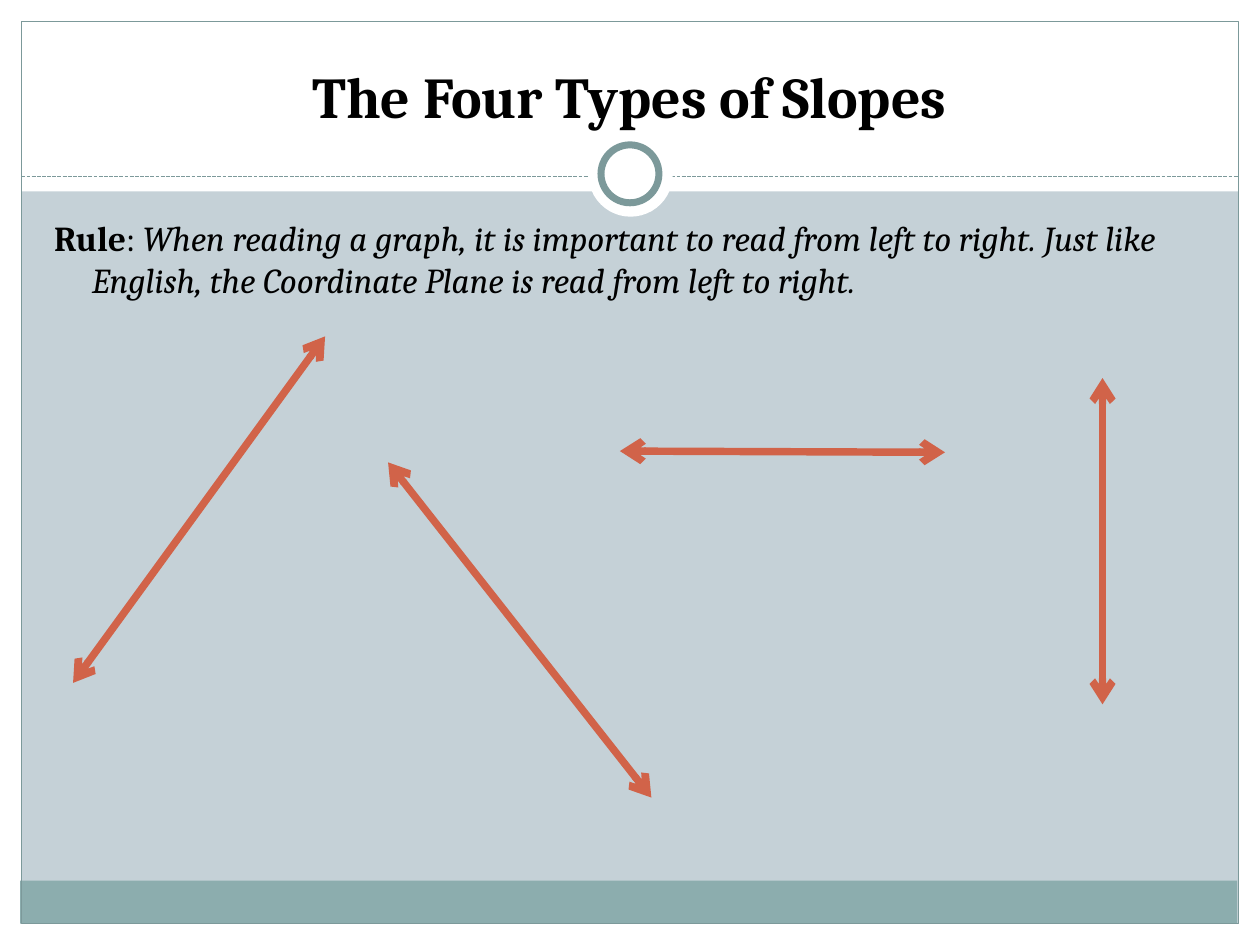
from lxml.etree import SubElement
from pptx import Presentation
from pptx.dml.color import RGBColor
from pptx.enum.dml import MSO_LINE
from pptx.enum.shapes import MSO_CONNECTOR, MSO_SHAPE
from pptx.enum.text import MSO_ANCHOR, MSO_AUTO_SIZE, PP_ALIGN
from pptx.oxml.ns import qn
from pptx.util import Inches, Pt

WHITE, MIST, TEAL, BORDER, ORANGE, BLACK = (
    "FFFFFF", "C5D1D7", "8CADAE", "7C999A", "D16349", "000000")


def paint(color_format, hex_color):
    """Colour a fill, or the fill of a line."""
    color_format.solid()
    color_format.fore_color.rgb = RGBColor.from_string(hex_color)


def add_line(start, end, color, width):
    line = slide.shapes.add_connector(
        MSO_CONNECTOR.STRAIGHT, *[Inches(v) for v in (*start, *end)])
    paint(line.line.fill, color)
    line.line.width = Pt(width)
    SubElement(line.element.spPr, qn("a:effectLst"))
    return line.line


prs = Presentation()
prs.slide_width, prs.slide_height = Inches(10), Inches(7.5)
slide = prs.slides.add_slide(prs.slide_layouts[1])
paint(slide.background.fill, MIST)

# Frame: white margins, header, footer band, border
panels = [
    ((0, 7.33, 10, 0.17), WHITE, None),
    ((0, 0, 10, 1.52), WHITE, None),
    ((0, 0, 0.17, 7.5), WHITE, None),
    ((9.83, 0, 0.17, 7.5), WHITE, None),
    ((0.16, 6.99, 9.66, 0.34), TEAL, None),
    ((0.17, 0.17, 9.66, 7.16), None, 0.75),
]
# Ring on the dashed divider
ring = [
    ((4.67, 1.05, 0.67, 0.67), WHITE, None),
    ((4.77, 1.15, 0.46, 0.46), WHITE, 4),
]
for preset, parts in ((MSO_SHAPE.RECTANGLE, panels), (MSO_SHAPE.OVAL, ring)):
    if parts is ring:
        divider = add_line((0.17, 1.4), (9.83, 1.4), BORDER, 0.75)
        divider.dash_style = MSO_LINE.SQUARE_DOT
    for box, fill, border_width in parts:
        part = slide.shapes.add_shape(preset, *[Inches(v) for v in box])
        part.shadow.inherit = False
        if fill:
            paint(part.fill, fill)
        else:
            part.fill.background()
        if border_width:
            paint(part.line.fill, BORDER)
            part.line.width = Pt(border_width)
        else:
            part.line.fill.background()

# Title and rule, in front of the frame
title, rule = slide.shapes.title, slide.placeholders[1]
texts = [
    (title, (0.33, 0.25, 9.33, 0.83), MSO_ANCHOR.BOTTOM, PP_ALIGN.CENTER, 33,
     [("The Four Types of Slopes", True, False)]),
    (rule, (0.33, 1.67, 9.3, 5), MSO_ANCHOR.TOP, PP_ALIGN.LEFT, 20,
     [("Rule", True, False),
      (": ", False, False),
      ("When reading a graph, it is important to read from left to right. "
       "Just like English, the Coordinate Plane is read from left to right.",
       False, True)]),
]
for holder, box, anchor, align, size, runs in texts:
    holder.element.getparent().append(holder.element)
    holder.left, holder.top, holder.width, holder.height = [Inches(v) for v in box]
    frame = holder.text_frame
    frame.word_wrap = True
    frame.auto_size = MSO_AUTO_SIZE.NONE
    frame.vertical_anchor = anchor
    paragraph = frame.paragraphs[0]
    paragraph.alignment = align
    for text, bold, italic in runs:
        run = paragraph.add_run()
        run.text = text
        run.font.name = "Cambria"
        run.font.size = Pt(size)
        run.font.bold, run.font.italic = bold, italic
        paint(run.font.fill, BLACK)

# Hanging indent without a bullet
rule_format = rule.text_frame.paragraphs[0]._p.get_or_add_pPr()
rule_format.set("marL", str(Inches(0.3)))
rule_format.set("indent", str(Inches(-0.3)))
SubElement(rule_format, qn("a:buNone"))

# Slopes: undefined, positive, negative, zero
slopes = [
    ((8.75, 5.59), (8.75, 3)),
    ((0.58, 5.42), (2.58, 2.67)),
    ((5.17, 6.33), (3.08, 3.67)),
    ((4.92, 3.58), (7.5, 3.59)),
]
for start, end in slopes:
    slope = add_line(start, end, ORANGE, 4.25)
    for tip in ("a:headEnd", "a:tailEnd"):
        SubElement(slope._get_or_add_ln(), qn(tip), type="arrow")

prs.save("out.pptx")
